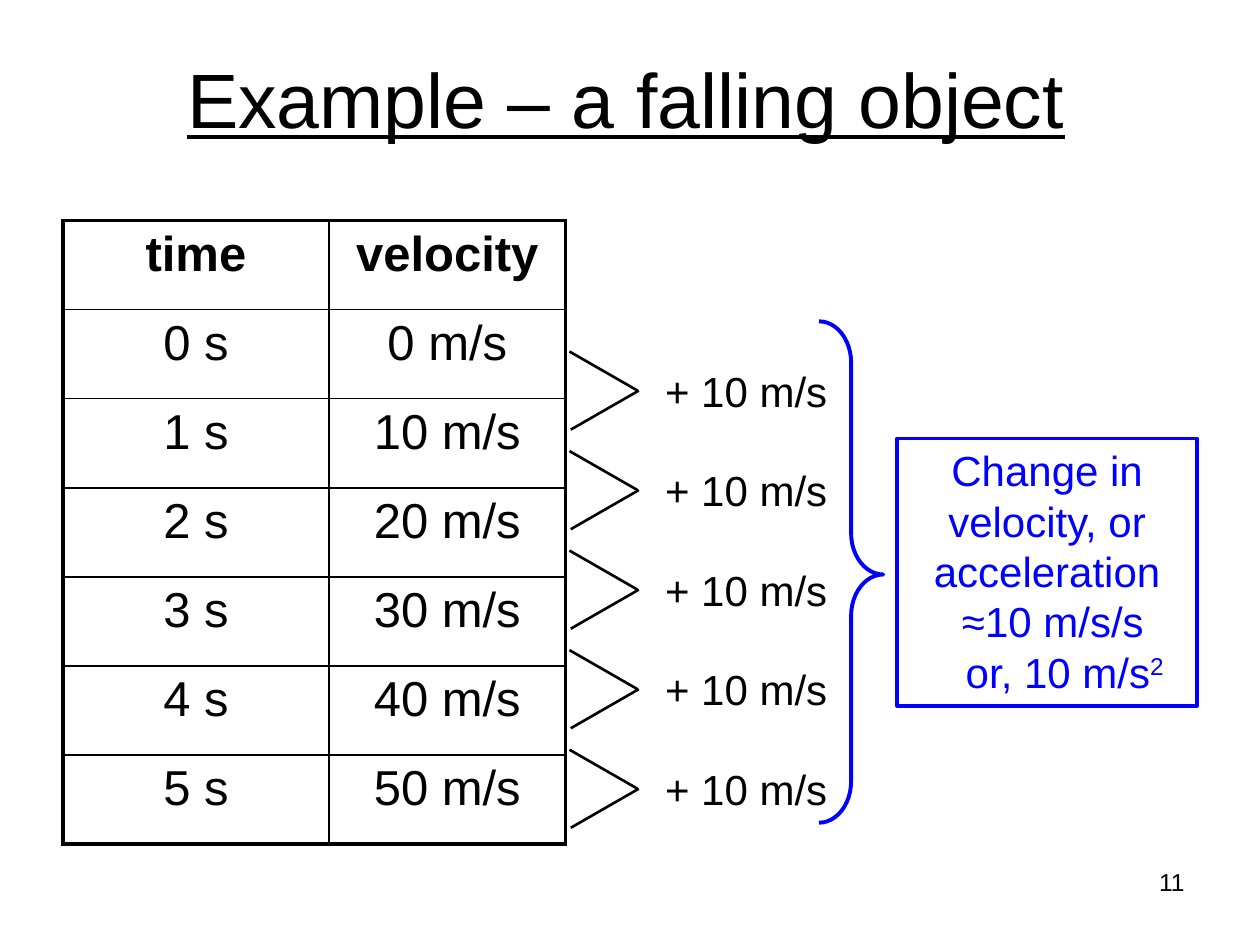
from lxml import etree
from pptx import Presentation
from pptx import util as u
from pptx.dml.color import RGBColor
from pptx.enum import shapes, text
from pptx.oxml.ns import qn

BLACK = RGBColor(0, 0, 0)
BLUE = RGBColor(0, 0, 255)


def add_run(p, value, **fmt):
    r = p.add_run()
    r.text = value
    color = fmt.pop("color", BLACK)
    for name, setting in {"name": "Arial", **fmt}.items():
        setattr(r.font, name, setting)
    r.font.color.rgb = color
    return r


def set_border(cell, side, width):
    ln = etree.SubElement(cell._tc.get_or_add_tcPr(), qn(f"a:ln{side}"), w=str(u.Pt(width)))
    fill = etree.SubElement(ln, qn("a:solidFill"))
    etree.SubElement(fill, qn("a:srgbClr"), val=str(BLACK))


prs = Presentation()
prs.slide_width, prs.slide_height = u.Inches(10), u.Inches(7.5)
s = prs.slides.add_slide(prs.slide_layouts[5])

# Title
title = s.shapes.title
title.left, title.top = u.Inches(0.47), u.Inches(0.15)
title.width, title.height = u.Inches(9), u.Inches(1.25)
tf = title.text_frame
tf.vertical_anchor = text.MSO_ANCHOR.MIDDLE
p = tf.paragraphs[0]
p.alignment = text.PP_ALIGN.CENTER
add_run(p, "Example – a falling object", size=u.Pt(44), underline=True)

# Table of time and velocity
rows = [("time", "velocity")] + [(f"{t} s", f"{10 * t} m/s") for t in range(6)]
last = len(rows) - 1
table = s.shapes.add_table(len(rows), 2, u.Inches(0.5), u.Inches(1.75),
                           u.Inches(3.99), u.Inches(4.95)).table
table.first_row = table.horz_banding = False
table.columns[0].width, table.columns[1].width = u.Inches(2.11), u.Inches(1.88)
for i, row in enumerate(rows):
    for j, value in enumerate(row):
        cell = table.cell(i, j)
        outer = {"L": j == 0, "R": j == 1, "T": i == 0, "B": i == last}
        for side, thick in outer.items():
            set_border(cell, side, 2.25 if thick else 1)
        cell.fill.background()
        p = cell.text_frame.paragraphs[0]
        before = etree.SubElement(p._p.get_or_add_pPr(), qn("a:spcBef"))
        etree.SubElement(before, qn("a:spcPct"), val="20000")
        p.alignment = text.PP_ALIGN.CENTER
        add_run(p, value, size=u.Pt(28), bold=i == 0)

# Velocity steps: a label and two lines meeting in a point
for i in range(5):
    y = 2.79 + 0.79 * i
    step = s.shapes.add_group_shape().shapes
    box = step.add_textbox(u.Inches(5.18), u.Inches(y + 0.06), u.Inches(1.49), u.Inches(0.5))
    tf = box.text_frame
    tf.word_wrap = False
    tf.auto_size = text.MSO_AUTO_SIZE.SHAPE_TO_FIT_TEXT
    add_run(tf.paragraphs[0], "+ 10 m/s", size=u.Pt(24))
    for x1, y1, x2 in ((4.52, y, 5.06), (4.53, y + 0.62, 5.07)):
        line = step.add_connector(shapes.MSO_CONNECTOR.STRAIGHT, u.Inches(x1), u.Inches(y1),
                                  u.Inches(x2), u.Inches(y + 0.31))
        line.line.color.rgb = BLACK
        line.line.width = u.Pt(1.5)
        etree.SubElement(line._element.spPr, qn("a:effectLst"))

# Brace and conclusion box
brace = s.shapes.add_shape(shapes.MSO_SHAPE.RIGHT_BRACE, u.Inches(6.5), u.Inches(2.55),
                           u.Inches(0.51), u.Inches(3.98))
brace.adjustments[0], brace.adjustments[1] = 0.645, 0.505
result = s.shapes.add_shape(shapes.MSO_SHAPE.RECTANGLE, u.Inches(7.12), u.Inches(3.48),
                            u.Inches(2.38), u.Inches(2.12))
for sp in (brace, result):
    sp.shadow.inherit = False
    sp.fill.background()
    sp.line.color.rgb = BLUE
    sp.line.width = u.Pt(2.25)

tf = result.text_frame
tf.word_wrap = True
tf.auto_size = text.MSO_AUTO_SIZE.SHAPE_TO_FIT_TEXT
tf.vertical_anchor = text.MSO_ANCHOR.TOP
lines = ["Change in velocity, or", "acceleration", " ≈10 m/s/s", "or, 10 m/s"]
for i, value in enumerate(lines):
    p = tf.paragraphs[0] if i == 0 else tf.add_paragraph()
    p.alignment = text.PP_ALIGN.CENTER
    add_run(p, value, size=u.Pt(24), color=BLUE)
p._p.get_or_add_pPr().set("marL", str(u.Inches(0.28)))
square = add_run(p, "2", size=u.Pt(24), color=BLUE)
square.font._element.set("baseline", "30000")

# Slide number
box = s.shapes.add_textbox(u.Inches(7.17), u.Inches(6.83), u.Inches(2.33), u.Inches(0.52))
box.text_frame.word_wrap = True
p = box.text_frame.paragraphs[0]
p.alignment = text.PP_ALIGN.RIGHT
add_run(p, "11", size=u.Pt(14))

prs.save("out.pptx")
